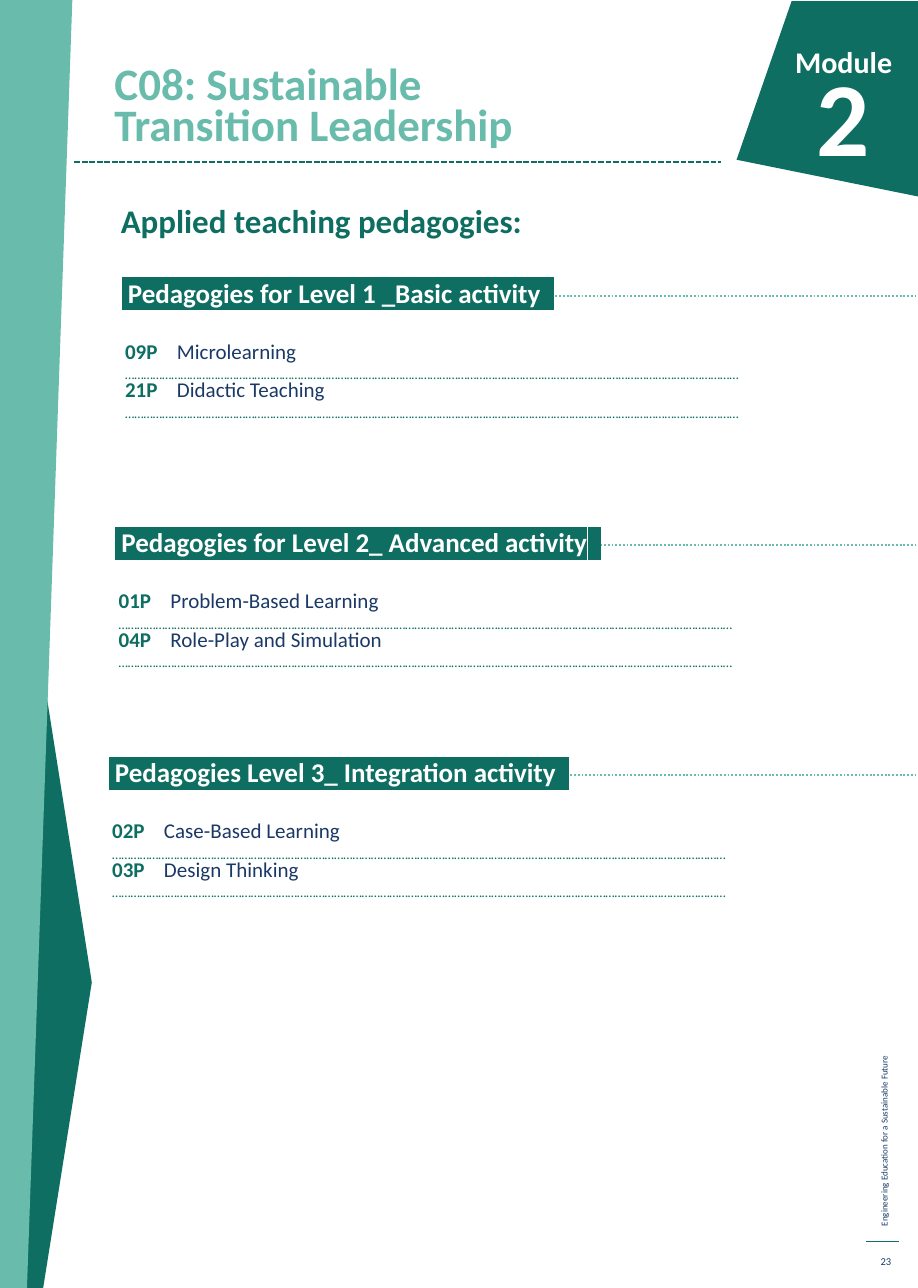
from lxml import etree
from pptx import Presentation
from pptx import util as u
from pptx.dml.color import RGBColor
from pptx.enum import dml, shapes, text
from pptx.oxml.ns import qn

COLORS = {"dark": "0E6E61", "light": "69BCAC", "navy": "1A3966", "white": "FFFFFF"}
FONT = "Calibri"
RULE = "……………………………………………………………………………………………………………………….………………………………………………………"
RULE_WIDTH = 412
ELLIPSIS_WIDTH = 6.21
RULE_SPACING = round((RULE_WIDTH / len(RULE) - ELLIPSIS_WIDTH) * 100)
LEADING = u.Pt(12.8)

SECTIONS = [
    (1.02, 2.63, " Pedagogies for Level 1 _Basic activity",
     [("09P", "Microlearning"), ("21P", "Didactic Teaching")]),
    (0.96, 4.94, " Pedagogies for Level 2_ Advanced activity",
     [("01P", "Problem-Based Learning"), ("04P", "Role-Play and Simulation")]),
    (0.90, 7.07, " Pedagogies Level 3_ Integration activity",
     [("02P", "Case-Based Learning"), ("03P", "Design Thinking")]),
]


def rgb(name):
    return RGBColor.from_string(COLORS[name])


def add_run(p, words, size, color, bold=False, highlight=None, spacing=None):
    r = p.add_run()
    r.text = words
    r.font.size = u.Pt(size)
    r.font.bold = bold
    r.font.color.rgb = rgb(color)
    r.font.name = FONT
    rPr = r.font._element
    if spacing:
        rPr.set("spc", str(spacing))
    if highlight:
        mark = etree.Element(qn("a:highlight"))
        etree.SubElement(mark, qn("a:srgbClr")).set("val", COLORS[highlight])
        rPr.find(qn("a:solidFill")).addnext(mark)


def add_text_box(s, x, y, w, h, anchor=text.MSO_ANCHOR.TOP):
    sp = s.shapes.add_textbox(*map(u.Inches, (x, y, w, h)))
    tf = sp.text_frame
    tf.word_wrap = True
    tf.vertical_anchor = anchor
    return sp


def add_label(s, box, words, size, color, bold=True, align=text.PP_ALIGN.LEFT,
              anchor=text.MSO_ANCHOR.TOP, before=0, leading=None):
    sp = add_text_box(s, *box, anchor)
    p = sp.text_frame.paragraphs[0]
    p.alignment = align
    p.space_before = u.Pt(before)
    p.line_spacing = leading
    add_run(p, words, size, color, bold)
    return sp


def add_line(s, x1, y, x2, color, width, dash=None):
    cx = s.shapes.add_connector(shapes.MSO_CONNECTOR.STRAIGHT,
                                *map(u.Inches, (x1, y, x2, y)))
    cx.line.color.rgb = rgb(color)
    cx.line.width = u.Pt(width)
    if dash:
        cx.line.dash_style = dash
    etree.SubElement(cx._element.spPr, qn("a:effectLst"))


def add_polygon(s, points, color):
    start, *rest = [(u.Inches(x), u.Inches(y)) for x, y in points]
    builder = s.shapes.build_freeform(*start)
    builder.add_line_segments(rest, close=True)
    sp = builder.convert_to_shape()
    sp.shadow.inherit = False
    sp.fill.solid()
    sp.fill.fore_color.rgb = rgb(color)
    sp.line.fill.background()


def add_list_paragraph(tf, first):
    p = tf.paragraphs[0] if first else tf.add_paragraph()
    p.line_spacing = LEADING
    pPr = p._p.get_or_add_pPr()
    pPr.set("marL", str(u.Inches(0.49)))
    pPr.set("indent", str(u.Inches(-0.48)))
    tabs = etree.SubElement(pPr, qn("a:tabLst"))
    for stop in (0.62, 1.75):
        etree.SubElement(tabs, qn("a:tab"), pos=str(u.Inches(stop)), algn="l")
    return p


def add_section(s, x, y, heading, items):
    add_line(s, 2.51, y + 0.11, 8.49, "light", 1.25, dml.MSO_LINE.ROUND_DOT)
    p = add_text_box(s, x, y, 6.7, 0.33).text_frame.paragraphs[0]
    p.alignment = text.PP_ALIGN.JUSTIFY
    p.line_spacing = LEADING
    p._p.get_or_add_pPr().set("marL", str(u.Inches(0.01)))
    add_run(p, heading, 18, "white", True, highlight="dark")
    add_run(p, ". ", 18, "dark", True, highlight="dark")

    tf = add_text_box(s, x + 0.03, y + 0.51, 6.64, 0.93).text_frame
    for i, (code, name) in enumerate(items):
        p = add_list_paragraph(tf, i == 0)
        add_run(p, code + "\t", 14, "dark", True)
        add_run(p, name, 14, "navy")
        p = add_list_paragraph(tf, False)
        add_run(p, RULE, 9, "dark", spacing=RULE_SPACING)


def set_title(s, lines):
    sp = s.shapes.title
    sp.left, sp.top, sp.width, sp.height = map(u.Inches, (0.96, 0.39, 5.36, 1.05))
    tf = sp.text_frame
    tf.auto_size = text.MSO_AUTO_SIZE.NONE
    tf.vertical_anchor = text.MSO_ANCHOR.BOTTOM
    p = tf.paragraphs[0]
    p.alignment = text.PP_ALIGN.LEFT
    p.line_spacing = u.Pt(26.8)
    p.space_before = u.Pt(0)
    for i, line in enumerate(lines):
        if i:
            p.add_line_break()
        add_run(p, line, 30, "light", True)


def add_side_band(s):
    add_polygon(s, [(0.4, 11.93), (0.23, 11.93), (0.23, 5.17), (0.83, 8.97),
                    (0.85, 9.1)], "dark")
    add_polygon(s, [(0, 0), (0.67, 0), (0.25, 11.93), (0, 11.93)], "light")


def add_module_badge(s):
    right = text.PP_ALIGN.RIGHT
    add_polygon(s, [(8.57, 0.01), (7.33, 0.01), (6.82, 1.48), (8.55, 1.83)], "dark")
    add_label(s, (6.56, 0.35, 1.8, 1.42), "Module", 20, "white", align=right, before=22.7)
    add_label(s, (6.35, 0.43, 1.8, 1.42), "2", 70, "white", align=right, before=22.7)


def add_footer(s):
    sp = add_label(s, (5.94, 9.11, 4.49, 0.2),
                   "Engineering Education for a Sustainable Future", 6, "navy", bold=False)
    sp.rotation = 270
    add_line(s, 8.02, 11.5, 8.32, "dark", 0.75)
    add_label(s, (8.02, 11.54, 0.33, 0.29), "23", 7, "navy", bold=False,
              align=text.PP_ALIGN.RIGHT, anchor=text.MSO_ANCHOR.MIDDLE)


def main():
    prs = Presentation()
    prs.slide_width, prs.slide_height = u.Inches(8.5), u.Inches(11.93)
    s = prs.slides.add_slide(prs.slide_layouts[5])
    set_title(s, ["C08: Sustainable", "Transition Leadership"])
    add_footer(s)
    add_side_band(s)
    add_label(s, (1.02, 1.85, 5.54, 1.05), "Applied teaching pedagogies:", 22, "dark",
              before=8.5, leading=0.9)
    for section in SECTIONS:
        add_section(s, *section)
    add_module_badge(s)
    add_line(s, 0.69, 1.5, 6.68, "dark", 1.25, dml.MSO_LINE.SQUARE_DOT)
    prs.save("out.pptx")


if __name__ == "__main__":
    main()
